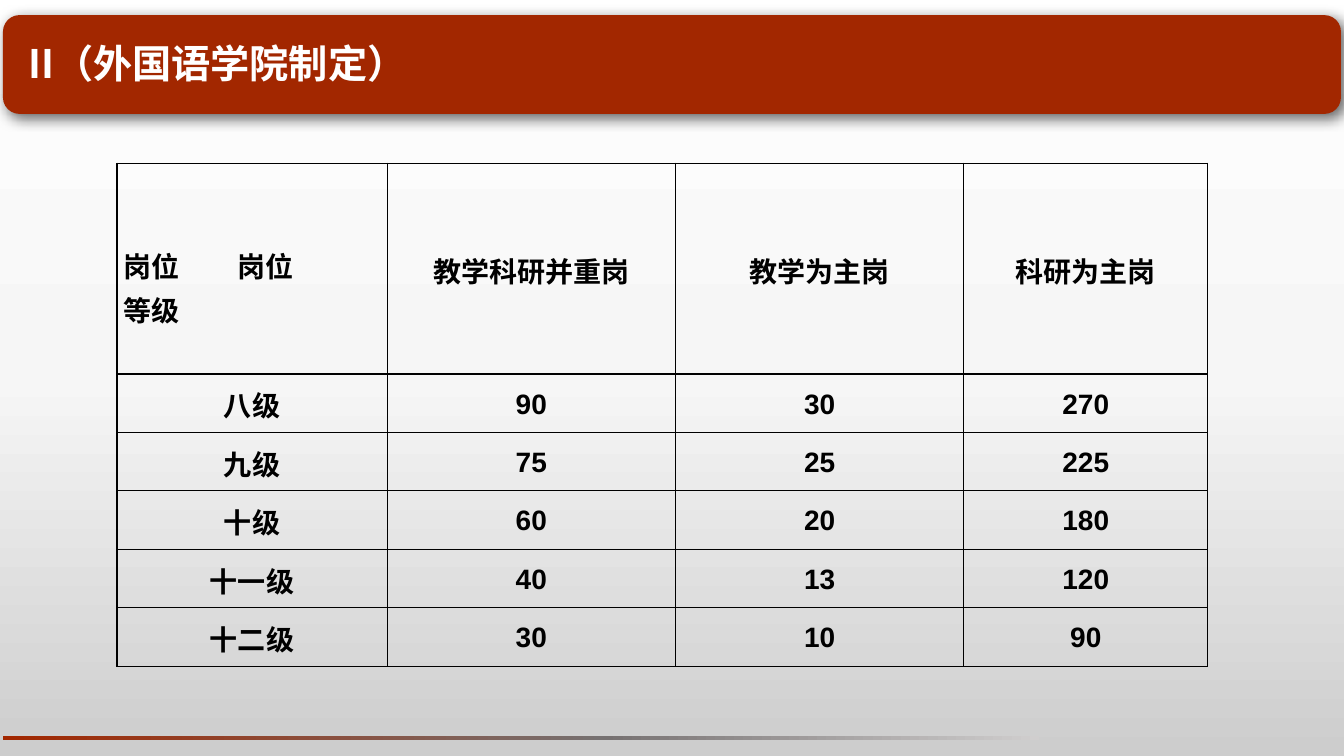
from copy import deepcopy

from lxml import etree
from pptx import Presentation
from pptx import util as u
from pptx.dml.color import RGBColor
from pptx.enum import shapes, text
from pptx.oxml import parse_xml
from pptx.oxml.ns import nsdecls, qn

PX = 9144  # 100 px to the inch
COLORS = {"red": "A22700", "gray": "767171", "pale": "D0CECE",
          "white": "FFFFFF", "mist": "F6F6F6", "silver": "CDCDCD",
          "black": "000000"}
CJK_FONT = "Noto Sans CJK SC"
COLUMN_WIDTHS = [268, 286, 286, 242]
ROW_HEIGHTS = [209] + [58] * 5
HEADER_CELL = ["岗位\t岗位", "等级"]
ROWS = [
    [HEADER_CELL, "教学科研并重岗", "教学为主岗", "科研为主岗"],
    ["八级", "90", "30", "270"],
    ["九级", "75", "25", "225"],
    ["十级", "60", "20", "180"],
    ["十一级", "40", "13", "120"],
    ["十二级", "30", "10", "90"],
]


def px(value):
    return u.Emu(value * PX)


def color(name):
    return RGBColor.from_string(COLORS[name])


def paint_gradient(fill, element, angle, stops):
    """Fill with three (position, colour name) stops; element holds the fill."""
    fill.gradient()
    fill.gradient_angle = angle
    stop_list = element.find(".//" + qn("a:gsLst"))
    stop_list.append(deepcopy(stop_list[0]))
    for stop, (position, name) in zip(fill.gradient_stops, stops):
        stop.position = position
        stop.color.rgb = color(name)


def add_block(slide, kind, left, top, width, height):
    shape = slide.shapes.add_shape(kind, px(left), px(top), px(width), px(height))
    shape.shadow.inherit = False
    shape.line.fill.background()
    return shape


def add_shadow(shape):
    effects = shape.element.spPr.find(qn("a:effectLst"))
    effects.append(parse_xml(
        f'<a:outerShdw {nsdecls("a")} blurRad="127000" dist="50800" dir="2700000">'
        f'<a:srgbClr val="{COLORS["black"]}"><a:alpha val="60000"/></a:srgbClr>'
        '</a:outerShdw>'))


def add_run(paragraph, words, size, font_name, color_name):
    run = paragraph.add_run()
    run.text = words
    run.font.size = u.Pt(size)
    run.font.bold = True
    run.font.name = font_name
    run.font.color.rgb = color(color_name)
    east_asian = etree.Element(qn("a:ea"), typeface=CJK_FONT)
    run.font._element.find(qn("a:latin")).addnext(east_asian)


def place_title(slide, words):
    title = slide.shapes.title
    title.left, title.top, title.width, title.height = map(px, (18, 18, 1297, 94))
    frame = title.text_frame
    frame.vertical_anchor = text.MSO_ANCHOR.MIDDLE
    paragraph = frame.paragraphs[0]
    paragraph.alignment = text.PP_ALIGN.LEFT
    paragraph.line_spacing = 0.9
    add_run(paragraph, words, 28, CJK_FONT, "white")
    title.element.getparent().append(title.element)  # in front of the banner


def add_borders(cell):
    properties = cell._tc.get_or_add_tcPr()
    for side in ("lnL", "lnR", "lnT", "lnB"):
        properties.append(parse_xml(
            f'<a:{side} {nsdecls("a")} w="12700"><a:solidFill>'
            f'<a:srgbClr val="{COLORS["black"]}"/></a:solidFill></a:{side}>'))


def fill_cell(cell, lines, alignment):
    add_borders(cell)
    cell.fill.background()
    cell.margin_left = cell.margin_right = px(7)
    cell.margin_top = cell.margin_bottom = 0
    cell.vertical_anchor = text.MSO_ANCHOR.MIDDLE
    frame = cell.text_frame
    for index, line in enumerate(lines):
        paragraph = frame.add_paragraph() if index else frame.paragraphs[0]
        paragraph.alignment = alignment
        paragraph.line_spacing = 1.07
        paragraph.space_after = u.Pt(0.2)
        if "\t" in line:
            paragraph._p.get_or_add_pPr().append(parse_xml(
                f'<a:tabLst {nsdecls("a")}><a:tab pos="{px(113)}" algn="l"/></a:tabLst>'))
        add_run(paragraph, line, 20, "Arial", "black")


def add_workload_table(slide):
    frame = slide.shapes.add_table(
        len(ROWS), len(COLUMN_WIDTHS), px(116), px(162),
        px(sum(COLUMN_WIDTHS)), px(sum(ROW_HEIGHTS)))
    table = frame.table
    table.first_row = table.horz_banding = False
    for column, width in zip(table.columns, COLUMN_WIDTHS):
        column.width = px(width)
    for row, height, values in zip(table.rows, ROW_HEIGHTS, ROWS):
        row.height = px(height)
        for cell, value in zip(row.cells, values):
            if value is HEADER_CELL:
                fill_cell(cell, value, text.PP_ALIGN.LEFT)
                cell.vertical_anchor = text.MSO_ANCHOR.TOP
                cell.margin_top = px(78)
            else:
                fill_cell(cell, [value], text.PP_ALIGN.CENTER)


def main():
    presentation = Presentation()
    presentation.slide_width, presentation.slide_height = px(1333), px(750)
    slide = presentation.slides.add_slide(presentation.slide_layouts[5])
    paint_gradient(slide.background.fill, slide.element, 270,
                   [(0, "white"), (0.5, "mist"), (1, "silver")])

    banner = add_block(slide, shapes.MSO_SHAPE.ROUNDED_RECTANGLE, 3, 15, 1327, 98)
    banner.fill.solid()
    banner.fill.fore_color.rgb = color("red")
    add_shadow(banner)

    footer_line = add_block(slide, shapes.MSO_SHAPE.RECTANGLE, 3, 730, 1028, 4)
    paint_gradient(footer_line.fill, footer_line.element, 0,
                   [(0, "red"), (0.58, "gray"), (1, "pale")])

    place_title(slide, "II（外国语学院制定）")
    add_workload_table(slide)
    presentation.save("out.pptx")


if __name__ == "__main__":
    main()
